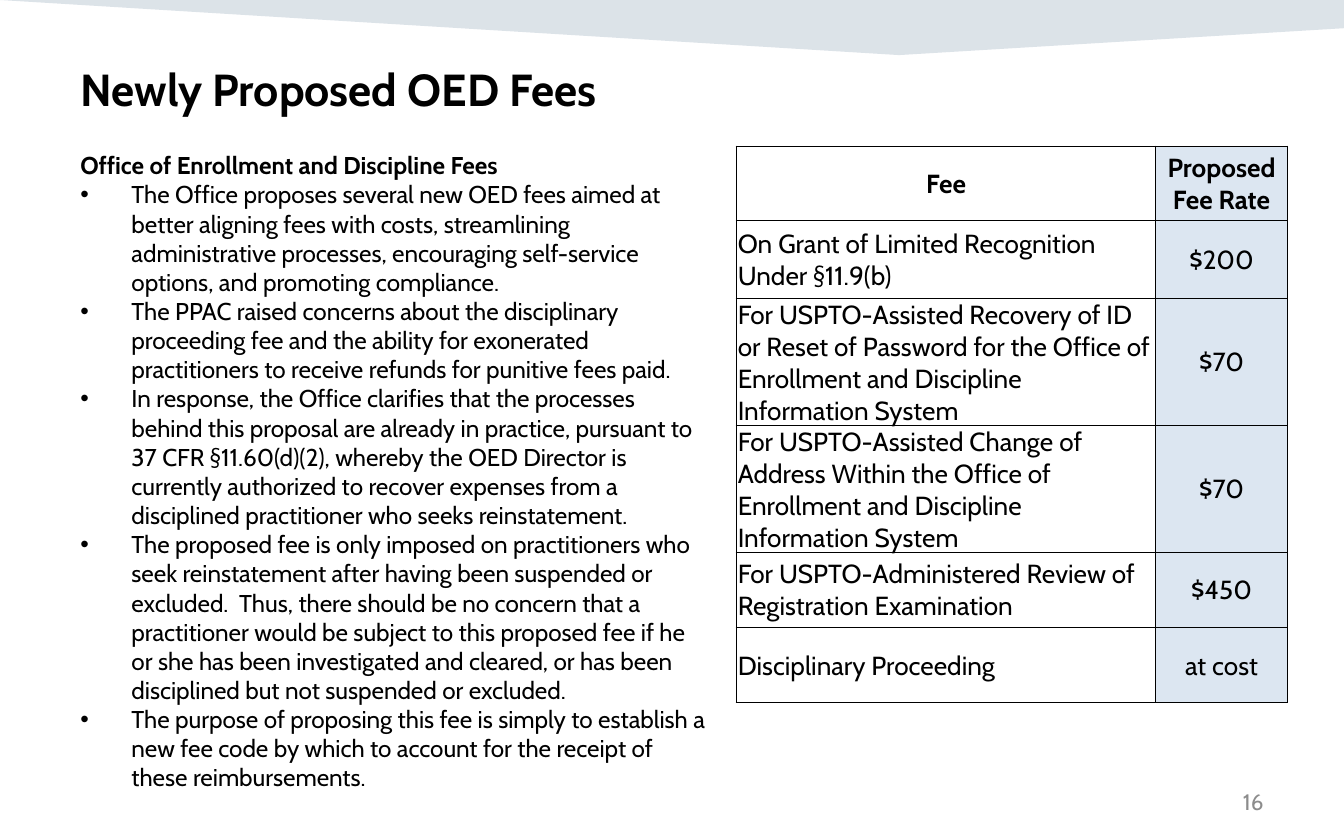
from pptx import Presentation
from pptx.dml.color import RGBColor
from pptx.enum.text import MSO_ANCHOR as Anchor, PP_ALIGN as Align
from pptx.oxml.ns import qn
from pptx.util import Inches, Pt
from lxml.etree import SubElement

FONT = "Cabin"
BLACK = RGBColor(0x00, 0x00, 0x00)
GRAY = RGBColor(0x8C, 0x8C, 0x8C)
NAVY = RGBColor(0x16, 0x44, 0x69)
PALE_BLUE = RGBColor(0xDC, 0xE6, 0xF1)

BULLETS = [
    "The Office proposes several new OED fees aimed at better aligning fees with costs, "
    "streamlining administrative processes, encouraging self-service options, and promoting "
    "compliance.",
    "The PPAC raised concerns about the disciplinary proceeding fee and the ability for "
    "exonerated practitioners to receive refunds for punitive fees paid.",
    "In response, the Office clarifies that the processes behind this proposal are already in "
    "practice, pursuant to 37 CFR §11.60(d)(2), whereby the OED Director is currently "
    "authorized to recover expenses from a disciplined practitioner who seeks reinstatement.",
    "The proposed fee is only imposed on practitioners who seek reinstatement after having been "
    "suspended or excluded.  Thus, there should be no concern that a practitioner would be "
    "subject to this proposed fee if he or she has been investigated and cleared, or has been "
    "disciplined but not suspended or excluded.",
    "The purpose of proposing this fee is simply to establish a new fee code by which to account "
    "for the receipt of these reimbursements.",
]

FEES = [
    ("Fee", "Proposed Fee Rate"),
    ("On Grant of Limited Recognition Under §11.9(b)", "$200"),
    ("For USPTO-Assisted Recovery of ID or Reset of Password for the Office of Enrollment and "
     "Discipline Information System", "$70"),
    ("For USPTO-Assisted Change of Address Within the Office of Enrollment and Discipline "
     "Information System", "$70"),
    ("For USPTO-Administered Review of Registration Examination", "$450"),
    ("Disciplinary Proceeding", "at cost"),
]
COL_WIDTHS = [3.12, 0.98]
ROW_HEIGHTS = [0.55, 0.58, 0.56, 0.56, 0.56, 0.56]


def add_run(p, text, size, bold=False, color=BLACK):
    r = p.add_run()
    r.text = text
    r.font.name = FONT
    r.font.size = Pt(size)
    r.font.bold = bold
    r.font.color.rgb = color


def add_text_box(s, left, top, width, height, anchor=Anchor.TOP):
    tf = s.shapes.add_textbox(Inches(left), Inches(top), Inches(width), Inches(height)).text_frame
    tf.word_wrap = True
    tf.vertical_anchor = anchor
    return tf


def add_banner(s):
    builder = s.shapes.build_freeform(0, 0)
    points = [(10, 0), (10, 0.21), (6.69, 0.41)]
    builder.add_line_segments([(Inches(x), Inches(y)) for x, y in points], close=True)
    sp = builder.convert_to_shape()
    sp.shadow.inherit = False
    sp.line.fill.background()
    sp.fill.solid()
    sp.fill.fore_color.rgb = NAVY
    color = sp.fill._xPr.find(qn("a:solidFill")).find(qn("a:srgbClr"))
    SubElement(color, qn("a:alpha"), val="15000")


def set_bullet(p):
    pPr = p._p.get_or_add_pPr()
    pPr.set("marL", str(Inches(0.38)))
    pPr.set("indent", str(-Inches(0.38)))
    SubElement(pPr, qn("a:buFont"), typeface="Arial")
    SubElement(pPr, qn("a:buChar"), char="•")


def add_body(s):
    tf = add_text_box(s, 0.5, 1.07, 4.88, 4.88)
    add_run(tf.paragraphs[0], "Office of Enrollment and Discipline Fees", 13, bold=True)
    for text in BULLETS:
        p = tf.add_paragraph()
        set_bullet(p)
        add_run(p, text, 13)


def set_borders(cell, widths):
    tcPr = cell._tc.get_or_add_tcPr()
    for side, width in widths.items():
        ln = SubElement(tcPr, qn(f"a:ln{side}"), w=str(Pt(width)))
        SubElement(SubElement(ln, qn("a:solidFill")), qn("a:srgbClr"), val=str(BLACK))


def fill_cell(cell, text, row, col):
    is_header, is_rate = row == 0, col == 1
    cell.margin_left = cell.margin_right = cell.margin_top = Inches(0.01)
    cell.margin_bottom = 0
    cell.vertical_anchor = Anchor.MIDDLE
    set_borders(cell, {"L": 0.5 if is_rate else 1, "R": 0.5, "T": 1 if is_header else 0.5, "B": 0.5})
    if is_rate:
        cell.fill.solid()
        cell.fill.fore_color.rgb = PALE_BLUE
    else:
        cell.fill.background()
    p = cell.text_frame.paragraphs[0]
    p.alignment = Align.CENTER if is_header or is_rate else Align.LEFT
    add_run(p, text, 14, bold=is_header)


def add_fee_table(s):
    table = s.shapes.add_table(
        len(FEES), len(COL_WIDTHS), Inches(5.48), Inches(1.09),
        Inches(sum(COL_WIDTHS)), Inches(sum(ROW_HEIGHTS))).table
    table.horz_banding = False
    for column, width in zip(table.columns, COL_WIDTHS):
        column.width = Inches(width)
    for row, (height, texts) in enumerate(zip(ROW_HEIGHTS, FEES)):
        table.rows[row].height = Inches(height)
        for col, text in enumerate(texts):
            fill_cell(table.cell(row, col), text, row, col)


def main():
    prs = Presentation()
    prs.slide_width, prs.slide_height = Inches(10), Inches(6.25)
    s = prs.slides.add_slide(prs.slide_layouts[6])
    add_banner(s)
    title = add_text_box(s, 0.5, 0.41, 9, 0.51)
    add_run(title.paragraphs[0], "Newly Proposed OED Fees", 24, bold=True)
    p = add_text_box(s, 7.17, 5.8, 2.33, 0.33, Anchor.MIDDLE).paragraphs[0]
    p.alignment = Align.RIGHT
    add_run(p, "16", 12, color=GRAY)
    add_body(s)
    add_fee_table(s)
    prs.save("out.pptx")


if __name__ == "__main__":
    main()
